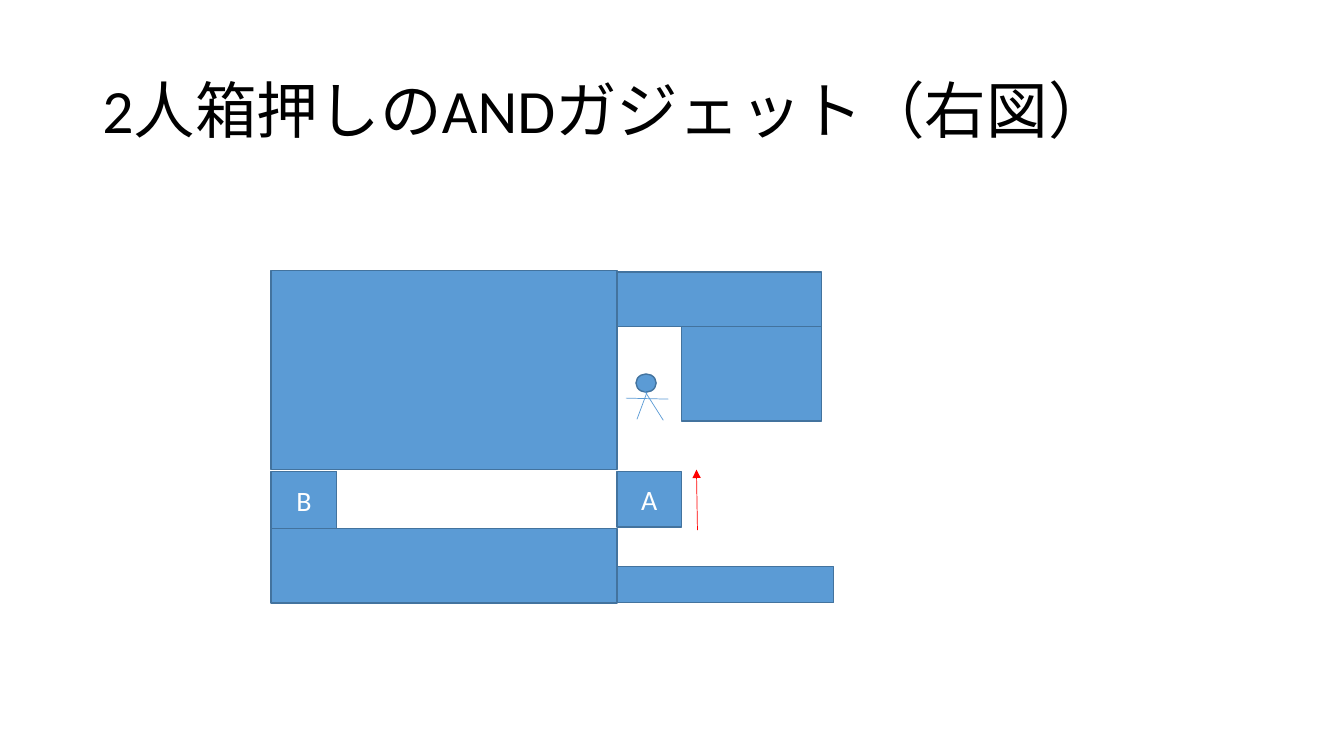
from dataclasses import dataclass

from pptx import Presentation
from pptx.dml.color import RGBColor
from pptx.enum import shapes, text
from pptx.oxml import ns, xmlchemy
from pptx.util import Pt


@dataclass(frozen=True)
class Theme:
    font: str = "Calibri"
    title_size: float = 44
    label_size: float = 20
    ink: str = "000000"
    label: str = "FFFFFF"
    block: str = "5B9BD5"
    edge: str = "43739E"
    push: str = "FF0000"
    edge_width: float = 1
    thin_width: float = 0.5


THEME = Theme()

# Shared edges of the walls, in points
WALL_LEFT, SHAFT_LEFT, SHAFT_RIGHT = 193.7, 440.7, 486.8
ROOM_RIGHT, FLOOR = 586.9, 430.6
TUNNEL_TOP, TUNNEL_BOTTOM = 336.8, 377.4
CEILING_TOP, CEILING_BOTTOM = 194.4, 233.4


def apply(target, values):
    for name, value in values.items():
        setattr(target, name, value)


def set_font(font, size, color):
    apply(font, {"name": THEME.font, "size": Pt(size)})
    font.color.rgb = RGBColor.from_string(color)


def set_line(line, color, width):
    line.color.rgb = RGBColor.from_string(color)
    line.width = Pt(width)


def add_title(slide, wording):
    title = slide.shapes.title
    apply(title, {"left": Pt(66), "top": Pt(28.75),
                  "width": Pt(828), "height": Pt(104.4)})
    frame = title.text_frame
    frame.text = wording
    apply(frame, {"vertical_anchor": text.MSO_ANCHOR.MIDDLE,
                  "word_wrap": True, "auto_size": text.MSO_AUTO_SIZE.NONE})
    apply(frame.paragraphs[0], {"alignment": text.PP_ALIGN.LEFT,
                                "line_spacing": 0.9})
    set_font(frame.paragraphs[0].runs[0].font, THEME.title_size, THEME.ink)


def add_block(slide, left, top, right, bottom, label="",
              kind=shapes.MSO_SHAPE.RECTANGLE):
    block = slide.shapes.add_shape(kind, Pt(left), Pt(top),
                                   Pt(right - left), Pt(bottom - top))
    block.shadow.inherit = False
    block.fill.solid()
    block.fill.fore_color.rgb = RGBColor.from_string(THEME.block)
    set_line(block.line, THEME.edge, THEME.edge_width)
    if label:
        frame = block.text_frame
        frame.text = label
        frame.vertical_anchor = text.MSO_ANCHOR.MIDDLE
        frame.paragraphs[0].alignment = text.PP_ALIGN.CENTER
        set_font(frame.paragraphs[0].runs[0].font, THEME.label_size, THEME.label)


def add_stroke(slide, start, end, color, arrow=False):
    stroke = slide.shapes.add_connector(
        shapes.MSO_CONNECTOR.STRAIGHT, *map(Pt, start + end))
    set_line(stroke.line, color, THEME.thin_width)
    properties = stroke._element.spPr
    if arrow:
        head = xmlchemy.OxmlElement("a:tailEnd")
        head.set("type", "triangle")
        properties.find(ns.qn("a:ln")).append(head)
    properties.append(xmlchemy.OxmlElement("a:effectLst"))


def add_worker(slide):
    add_block(slide, 454.3, 267.1, 468.7, 280.1, kind=shapes.MSO_SHAPE.OVAL)
    arms = ((447.1, 284.4), (477.4, 285.1))
    left_leg = ((462.2, 280.1), (455, 299.5))
    right_leg = ((460.1, 278.6), (473.8, 300.2))
    for start, end in (arms, left_leg, right_leg):
        add_stroke(slide, start, end, THEME.block)


def main():
    deck = Presentation()
    apply(deck, {"slide_width": Pt(960), "slide_height": Pt(540)})
    slide = deck.slides.add_slide(deck.slide_layouts[5])
    add_title(slide, "2人箱押しのANDガジェット（右図）")

    # Walls around the tunnel and the shaft
    add_block(slide, WALL_LEFT, 193, SHAFT_LEFT, 335.5)
    add_block(slide, SHAFT_LEFT, CEILING_TOP, ROOM_RIGHT, CEILING_BOTTOM)
    add_block(slide, WALL_LEFT, TUNNEL_BOTTOM, SHAFT_LEFT, FLOOR)

    # Movable boxes and the push direction
    add_block(slide, WALL_LEFT, TUNNEL_TOP, 240.6, TUNNEL_BOTTOM, "B")
    add_block(slide, SHAFT_LEFT, TUNNEL_TOP, SHAFT_RIGHT, 376.6, "A")
    add_stroke(slide, (498.2, 378.7), (497.5, 335.5), THEME.push, arrow=True)

    add_worker(slide)

    # Walls on the right of the shaft
    add_block(slide, SHAFT_RIGHT, CEILING_BOTTOM, ROOM_RIGHT, 300.8)
    add_block(slide, SHAFT_LEFT, 404.6, 595.5, FLOOR)

    deck.save("out.pptx")


if __name__ == "__main__":
    main()
